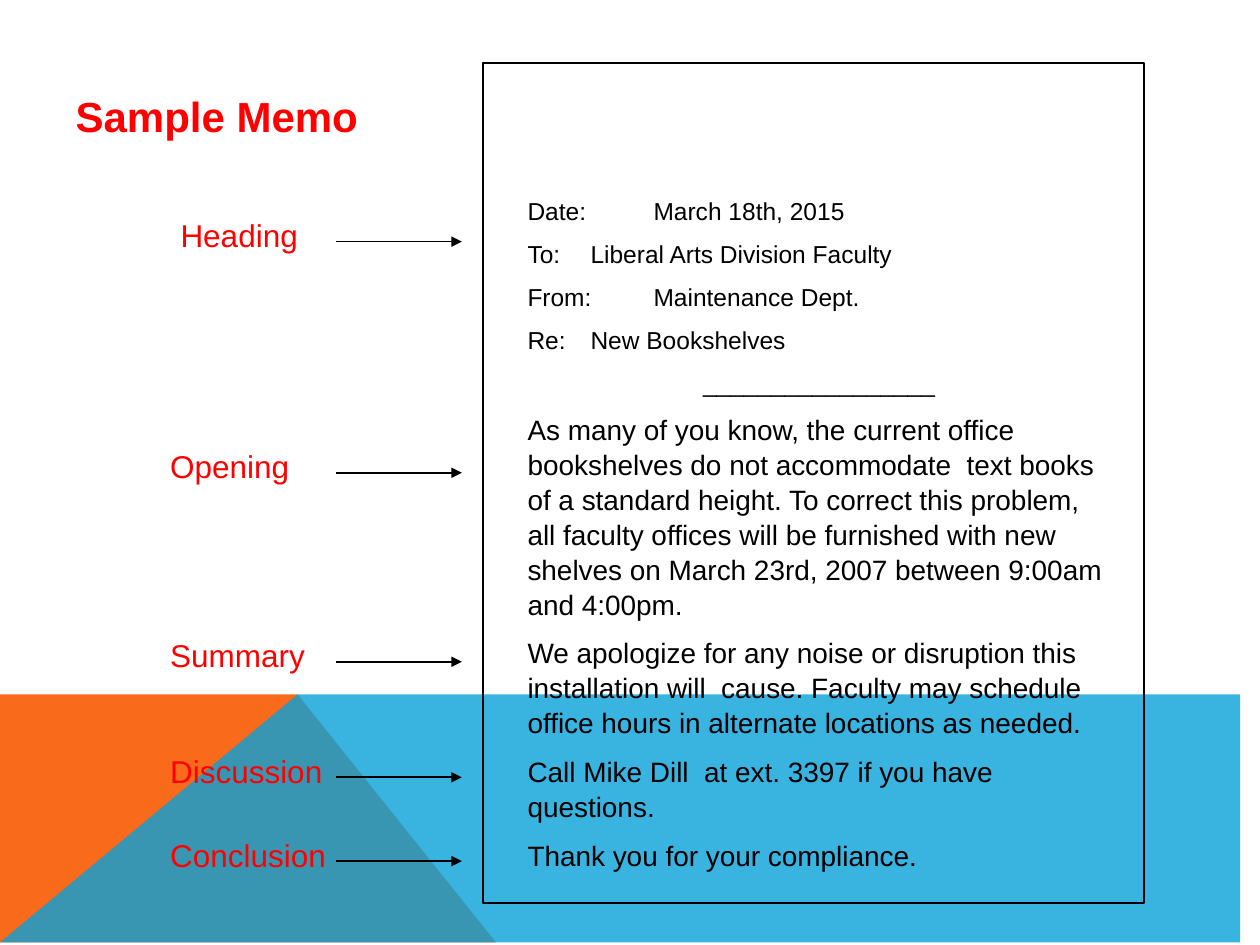
from dataclasses import dataclass

from lxml.etree import SubElement
from pptx import Presentation
from pptx.dml.color import RGBColor
from pptx.enum.shapes import MSO_CONNECTOR, MSO_SHAPE
from pptx.enum.text import MSO_ANCHOR, MSO_AUTO_SIZE, PP_ALIGN
from pptx.oxml.ns import qn
from pptx.util import Cm, Pt


@dataclass(frozen=True)
class Theme:
    font: str = "Arial"
    ink: RGBColor = RGBColor(0x00, 0x00, 0x00)
    accent: RGBColor = RGBColor(0xFF, 0x00, 0x00)
    orange: RGBColor = RGBColor(0xF9, 0x6A, 0x1B)
    blue: RGBColor = RGBColor(0x08, 0xA1, 0xD9)
    blue_opacity: int = 80
    title_size: int = 24
    label_size: int = 18
    body_size: int = 16
    head_size: int = 14
    line_width: int = 1


THEME = Theme()
PAGE_WIDTH, PAGE_HEIGHT = 25.4, 19.05

MEMO_HEAD = [
    "Date: \tMarch 18th, 2015",
    "To: \tLiberal Arts Division Faculty",
    "From: \tMaintenance Dept.",
    "Re: \tNew Bookshelves",
]
MEMO_RULE = "_________________"
MEMO_BODY = [
    "As many of you know, the current office bookshelves do not accommodate  text books "
    "of a standard height. To correct this problem, all faculty offices will be furnished "
    "with new shelves on March 23rd, 2007 between 9:00am and 4:00pm.",
    "We apologize for any noise or disruption this installation will  cause. Faculty may "
    "schedule office hours in alternate locations as needed.",
    "Call Mike Dill  at ext. 3397 if you have questions.",
    "Thank you for your compliance.",
]
# Label, left and top in centimetres
PARTS = [
    ("Heading", 3.39, 4.23),
    ("Opening", 3.18, 8.89),
    ("Summary", 3.18, 12.7),
    ("Discussion", 3.18, 15.03),
    ("Conclusion", 3.18, 16.72),
]


def place(shape, left, top, width, height):
    shape.left, shape.top = Cm(left), Cm(top)
    shape.width, shape.height = Cm(width), Cm(height)


def prepare_frame(shape):
    """Let the text start at the top, wrap, and keep its size."""
    frame = shape.text_frame
    frame.word_wrap = True
    frame.auto_size = MSO_AUTO_SIZE.NONE
    frame.vertical_anchor = MSO_ANCHOR.TOP
    return frame


def write(para, text, *, size, color=THEME.ink, bold=False, align=PP_ALIGN.LEFT,
          before=0, spacing=1.0):
    para.alignment = align
    para.space_before = Pt(before)
    para.line_spacing = spacing
    span = para.add_run()
    span.text = text
    span.font.name = THEME.font
    span.font.size = Pt(size)
    span.font.bold = bold
    span.font.color.rgb = color


def clear_bullet(para, tab):
    """Drop bullet and indent, and set one tab stop."""
    props = para._p.get_or_add_pPr()
    props.set("marL", "0")
    props.set("indent", "0")
    SubElement(props, qn("a:buNone"))
    stops = SubElement(props, qn("a:tabLst"))
    SubElement(stops, qn("a:tab"), pos=str(Cm(tab)), algn="l")


def add_band(page, points, color, depth, opacity=100):
    """Add a filled outline at the given depth from the back."""
    builder = page.shapes.build_freeform(*points[0], scale=Cm(1))
    builder.add_line_segments(points[1:], close=True)
    band = builder.convert_to_shape()
    band.shadow.inherit = False
    band.line.fill.background()
    band.fill.solid()
    band.fill.fore_color.rgb = color
    if opacity < 100:
        tint = band.element.spPr.find(qn("a:solidFill"))[0]
        SubElement(tint, qn("a:alpha"), val=str(opacity * 1000))
    tree = band.element.getparent()
    tree.insert(2 + depth, band.element)


def add_backdrop(page, top, peak, foot):
    add_band(page, [(0, PAGE_HEIGHT), (0, top), (peak, top), (foot, PAGE_HEIGHT)],
             THEME.orange, 0)
    add_band(page, [(0, PAGE_HEIGHT), (peak, top), (PAGE_WIDTH, top),
                    (PAGE_WIDTH, PAGE_HEIGHT)],
             THEME.blue, 1, THEME.blue_opacity)


def add_title(page, left, top, width, height):
    title = page.shapes.title
    place(title, left, top, width, height)
    write(prepare_frame(title).paragraphs[0], "Sample Memo",
          size=THEME.title_size, color=THEME.accent, bold=True)


def add_memo(page, left, top, width, height):
    border = page.shapes.add_shape(MSO_SHAPE.RECTANGLE, Cm(left), Cm(top),
                                   Cm(width), Cm(height))
    border.shadow.inherit = False
    border.fill.background()
    border.line.color.rgb = THEME.ink
    border.line.width = Pt(THEME.line_width)

    body = page.placeholders[1]
    place(body, left + 0.64, top + 2.54, width - 1.06, height - 3.04)
    frame = prepare_frame(body)
    lines = [(text, THEME.head_size, PP_ALIGN.LEFT) for text in MEMO_HEAD]
    lines.append((MEMO_RULE, THEME.head_size, PP_ALIGN.CENTER))
    lines += [(text, THEME.body_size, PP_ALIGN.LEFT) for text in MEMO_BODY]
    for index, (text, size, align) in enumerate(lines):
        para = frame.add_paragraph() if index else frame.paragraphs[0]
        write(para, text, size=size, align=align, spacing=1.04,
              before=size / 2 if index else 0)
        clear_bullet(para, tab=2.54)


def add_arrow(page, left, right, y):
    arrow = page.shapes.add_connector(MSO_CONNECTOR.STRAIGHT, Cm(left), Cm(y),
                                      Cm(right), Cm(y))
    arrow.line.color.rgb = THEME.ink
    arrow.line.width = Pt(THEME.line_width)
    SubElement(arrow.line._get_or_add_ln(), qn("a:tailEnd"), type="triangle")
    SubElement(arrow.element.spPr, qn("a:effectLst"))


def add_part(page, text, left, top):
    """Add a label and the arrow from it to the memo."""
    label = page.shapes.add_textbox(Cm(left), Cm(top), Cm(4.2), Cm(1.02))
    write(prepare_frame(label).paragraphs[0], text,
          size=THEME.label_size, color=THEME.accent)
    add_arrow(page, 6.77, 9.31, top + 0.64)


def main():
    deck = Presentation()
    deck.slide_width, deck.slide_height = Cm(PAGE_WIDTH), Cm(PAGE_HEIGHT)
    page = deck.slides.add_slide(deck.slide_layouts[1])
    add_backdrop(page, top=14.03, peak=5.66, foot=9.92)
    add_title(page, 1.27, 1.69, 8.04, 1.27)
    add_memo(page, 9.74, 1.27, 13.33, 16.93)
    for text, left, top in PARTS:
        add_part(page, text, left, top)
    deck.save("out.pptx")


if __name__ == "__main__":
    main()
